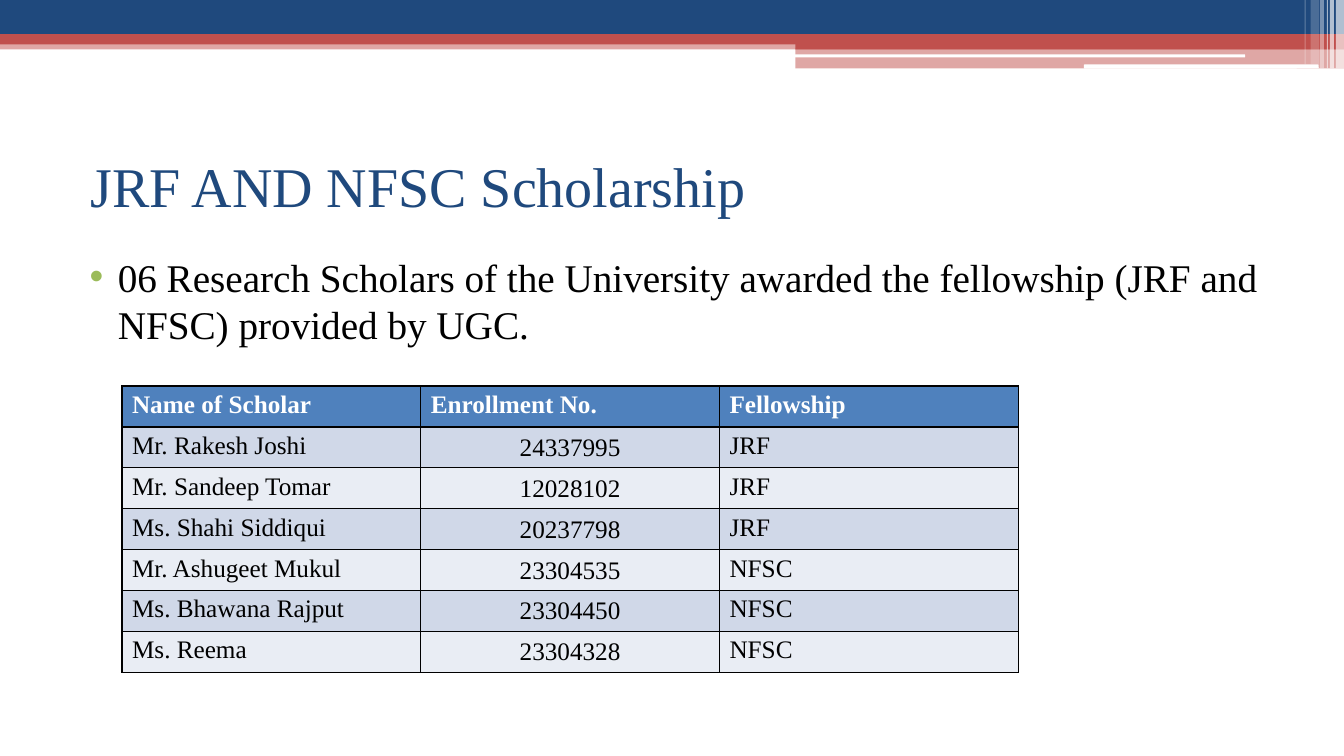
"""Build the JRF and NFSC scholarship slide with its table of scholars."""
from lxml.etree import SubElement
from pptx import Presentation
from pptx.dml.color import RGBColor
from pptx.enum.shapes import MSO_SHAPE
from pptx.enum.text import MSO_ANCHOR, PP_ALIGN
from pptx.oxml.ns import qn
from pptx.util import Inches, Pt

COLORS = {"navy": "1F497D", "red": "C0504D", "white": "FFFFFF", "black": "000000",
          "green": "9BBB59", "head": "4F81BD", "dark": "D0D8E8", "light": "E9EDF4"}
FONT = "Times New Roman"


def style(font, size, color, bold=False):
    font.name, font.size, font.bold = FONT, Pt(size), bold
    font.color.rgb = RGBColor.from_string(COLORS[color])


def add_text(top, height, text, size, color):
    box = slide.shapes.add_textbox(Inches(0.67), Inches(top), Inches(12), Inches(height))
    frame = box.text_frame
    frame.word_wrap = True
    frame.text = text
    style(frame.paragraphs[0].runs[0].font, size, color)
    return frame


deck = Presentation()
deck.slide_width, deck.slide_height = Inches(13.33), Inches(7.5)
slide = deck.slides.add_slide(deck.slide_layouts[6])

RECT, ROUND = MSO_SHAPE.RECTANGLE, MSO_SHAPE.ROUNDED_RECTANGLE
bands = [
    (RECT, 0, 0.4, 13.33, 0.09, "red", 50),
    (RECT, 0, 0, 13.33, 0.34, "navy", 100),
    (RECT, 0, 0.34, 13.33, 0.1, "red", 100),
    (RECT, 7.89, 0.39, 5.44, 0.1, "red", 100),
    (RECT, 7.89, 0.48, 5.44, 0.2, "red", 50),
    (ROUND, 7.88, 0.54, 4.47, 0.03, "white", 100),
    (ROUND, 10.75, 0.64, 2.33, 0.04, "white", 100),
    (RECT, 13.25, 0, 0.08, 0.68, "white", 65),
    (RECT, 13.19, 0, 0.04, 0.68, "white", 65),
    (RECT, 13.16, 0, 0.01, 0.68, "white", 60),
    (RECT, 13.09, 0, 0.04, 0.68, "white", 40),
    (RECT, 13, 0, 0.08, 0.64, "white", 20),
    (RECT, 12.94, 0, 0.01, 0.64, "white", 30),
]
for kind, left, top, width, height, color, alpha in bands:
    band = slide.shapes.add_shape(kind, Inches(left), Inches(top), Inches(width), Inches(height))
    band.shadow.inherit = False
    band.line.fill.background()
    band.fill.solid()
    band.fill.fore_color.rgb = RGBColor.from_string(COLORS[color])
    if alpha < 100:
        tint = band.fill._xPr.find(qn("a:solidFill"))[0]
        SubElement(tint, qn("a:alpha"), val=str(alpha * 1000))

title = add_text(1.25, 1.17, "JRF AND NFSC Scholarship", 40, "navy")
title.vertical_anchor = MSO_ANCHOR.MIDDLE
title.margin_left = Inches(0.23)

body = add_text(2.46, 4.73, "06 Research Scholars of the University awarded the fellowship "
                "(JRF and NFSC) provided by UGC.", 28, "black")
props = body.paragraphs[0]._p.get_or_add_pPr()
props.set("marL", str(Inches(0.4)))
props.set("indent", str(Inches(-0.28)))
SubElement(SubElement(props, qn("a:buClr")), qn("a:srgbClr"), val=COLORS["green"])
SubElement(props, qn("a:buFont"), typeface="Arial")
SubElement(props, qn("a:buChar"), char="•")

rows = [
    ("Name of Scholar", "Enrollment No.", "Fellowship"),
    ("Mr. Rakesh Joshi", "24337995", "JRF"),
    ("Mr. Sandeep Tomar", "12028102", "JRF"),
    ("Ms. Shahi Siddiqui", "20237798", "JRF"),
    ("Mr. Ashugeet Mukul", "23304535", "NFSC"),
    ("Ms. Bhawana Rajput", "23304450", "NFSC"),
    ("Ms. Reema", "23304328", "NFSC"),
]
table = slide.shapes.add_table(len(rows), 3, Inches(1.21), Inches(3.83),
                               Inches(8.89), Inches(2.84)).table
for r, row in enumerate(rows):
    fill = "head" if r == 0 else ("light", "dark")[r % 2]
    for c, text in enumerate(row):
        cell = table.cell(r, c)
        cell.text = text
        para = cell.text_frame.paragraphs[0]
        style(para.runs[0].font, 18, "black" if r else "white", r == 0)
        if r and c == 1:
            para.alignment = PP_ALIGN.CENTER
            cell.vertical_anchor = MSO_ANCHOR.MIDDLE
            cell.margin_left = cell.margin_right = cell.margin_top = Inches(0.01)
            cell.margin_bottom = 0
        for side in ("lnL", "lnR", "lnT", "lnB"):
            edge = SubElement(cell._tc.get_or_add_tcPr(), qn("a:" + side), w=str(Pt(1)))
            SubElement(SubElement(edge, qn("a:solidFill")), qn("a:srgbClr"), val=COLORS["black"])
        cell.fill.solid()
        cell.fill.fore_color.rgb = RGBColor.from_string(COLORS[fill])

deck.save("out.pptx")
